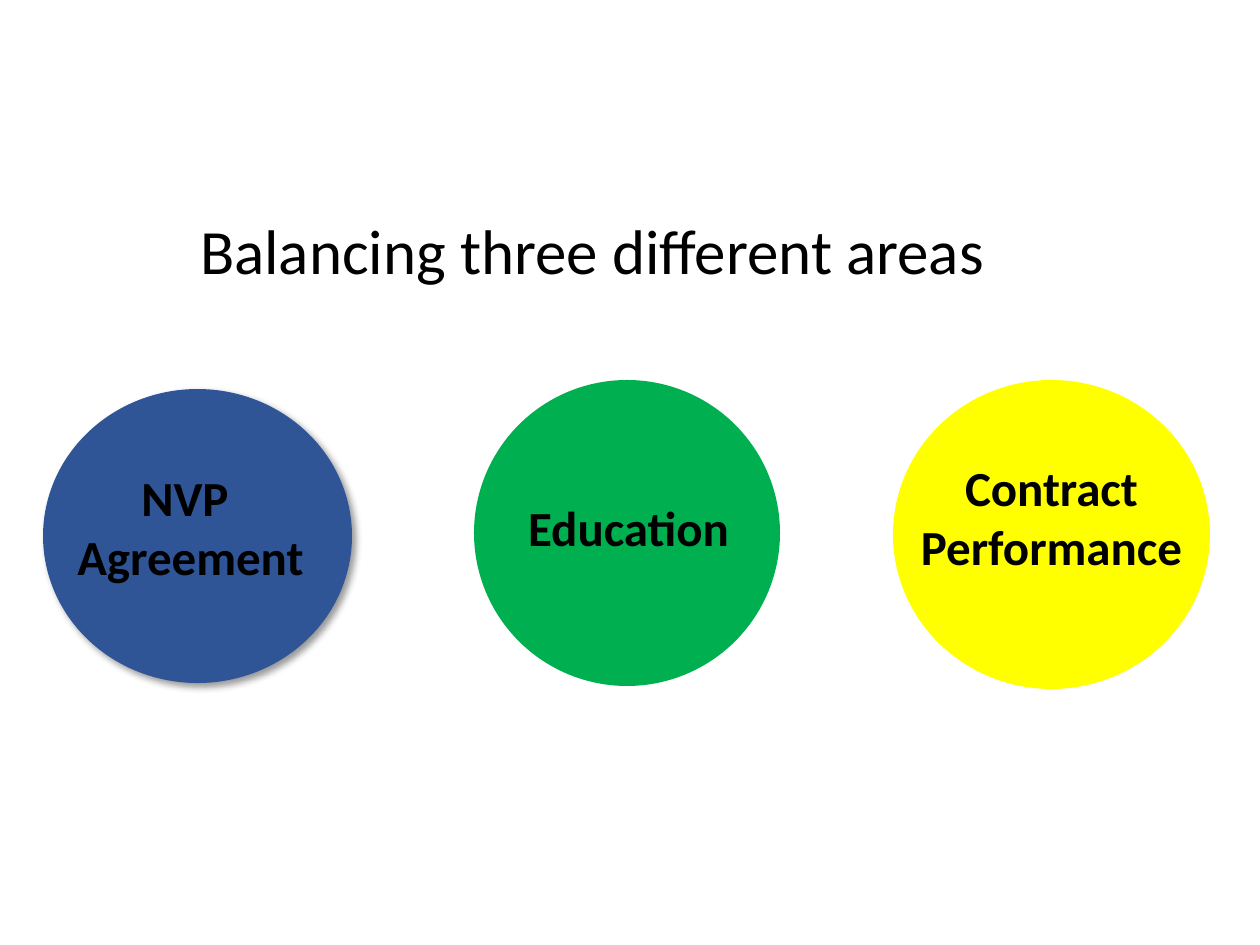
"""Build a slide with three coloured circles for the areas to balance."""
import pptx
import pptx.dml.color
import pptx.enum.shapes
import pptx.enum.text
import pptx.oxml
import pptx.oxml.ns
import pptx.util

SCALE = 914400 / 126


def px(*lengths):
    return [pptx.util.Emu(round(length * SCALE)) for length in lengths]


def add_text(text, *, box, size=28, bold=True, color="000000"):
    frame = slide.shapes.add_textbox(*px(*box)).text_frame
    frame.word_wrap = True
    frame.auto_size = pptx.enum.text.MSO_AUTO_SIZE.SHAPE_TO_FIT_TEXT
    frame.text = text
    for paragraph in frame.paragraphs:
        paragraph.alignment = pptx.enum.text.PP_ALIGN.CENTER
        for run in paragraph.runs:
            run.font.name = "Calibri"
            run.font.size = pptx.util.Pt(size)
            run.font.bold = bold
            run.font.color.rgb = pptx.dml.color.RGBColor.from_string(color)


presentation = pptx.Presentation()
presentation.slide_width, presentation.slide_height = px(1260, 945)
slide = presentation.slides.add_slide(presentation.slide_layouts[6])

areas = [
    ("Contract Performance", "FFFF00", (893, 380, 317, 309), (906, 451, 291, 131), False),
    ("NVP \nAgreement", "2F5597", (43, 389, 309, 294), (59, 461, 263, 131), True),
    ("Education", "00B050", (474, 380, 306, 306), (483, 491, 291, 131), False),
]

for label, fill, circle_box, label_box, shadowed in areas:
    circle = slide.shapes.add_shape(pptx.enum.shapes.MSO_SHAPE.OVAL, *px(*circle_box))
    circle.shadow.inherit = False
    circle.fill.solid()
    circle.fill.fore_color.rgb = pptx.dml.color.RGBColor.from_string(fill)
    circle.line.fill.background()
    if shadowed:
        effects = circle._element.spPr.find(pptx.oxml.ns.qn("a:effectLst"))
        effects.append(pptx.oxml.parse_xml(
            f'<a:outerShdw {pptx.oxml.ns.nsdecls("a")} blurRad="50800" dist="38100" '
            'dir="2700000" algn="tl" rotWithShape="0"><a:srgbClr val="000000">'
            '<a:alpha val="40000"/></a:srgbClr></a:outerShdw>'))

for label, fill, circle_box, label_box, shadowed in areas:
    add_text(label, box=label_box)

add_text("Balancing three different areas ", box=(101, 205, 997, 89), size=36, bold=False)

presentation.save("out.pptx")
